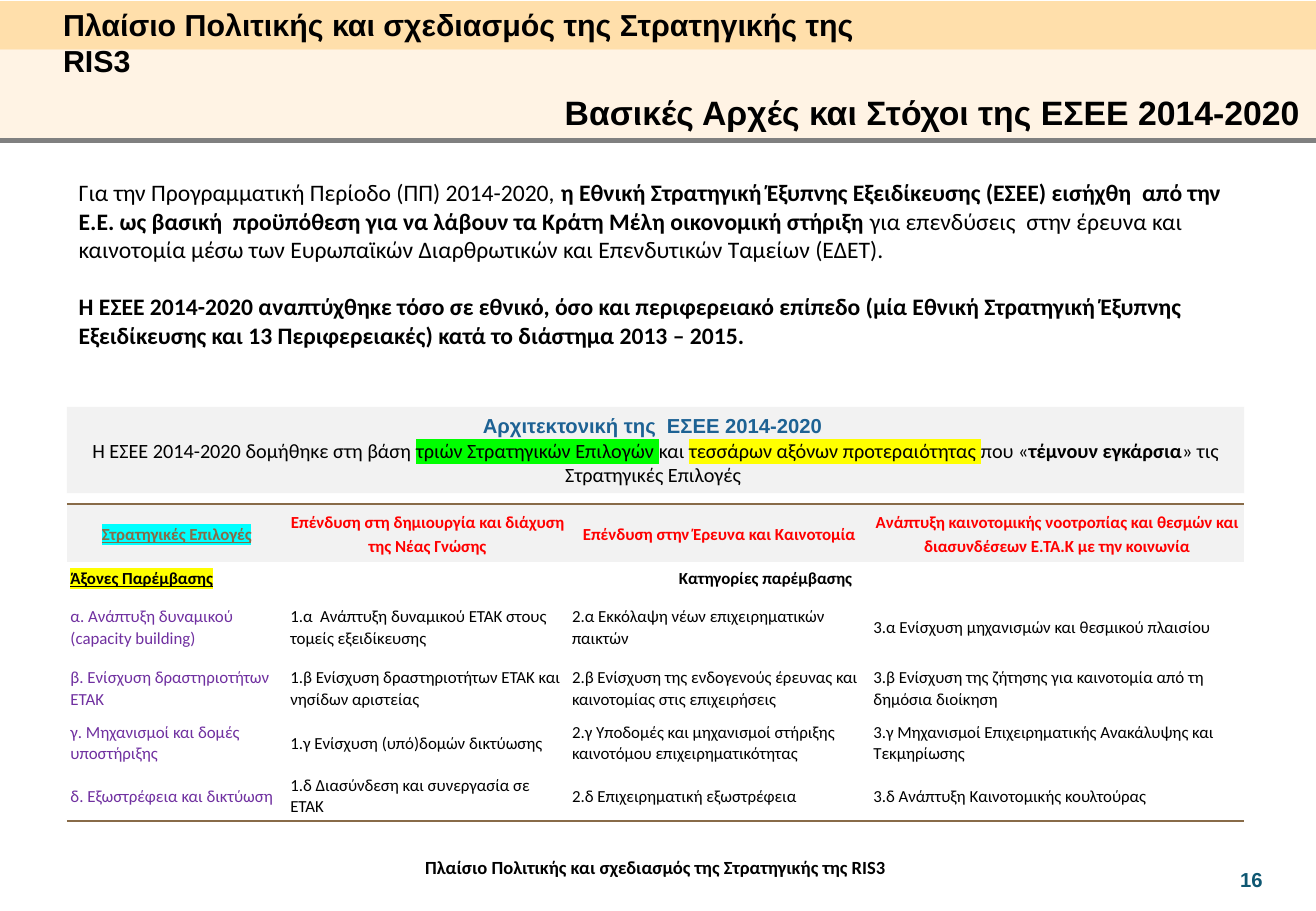
import pptx
import pptx.dml.color
import pptx.enum.shapes
import pptx.enum.text
import pptx.oxml
import pptx.oxml.ns
import pptx.util
from lxml import etree

Pt = pptx.util.Pt
ALIGN = pptx.enum.text.PP_ALIGN
ANCHOR = pptx.enum.text.MSO_ANCHOR
qn = pptx.oxml.ns.qn

COLORS = {
    "black": "000000", "red": "FF0000", "purple": "7030A0", "brown": "886B48",
    "blue": "1D6294", "teal": "0E5772", "gray": "808080", "panel": "F2F2F2",
    "band": "FFDFAB", "pale_band": "FFE9CA",
    "cyan": "00FFFF", "yellow": "FFFF00", "green": "00FF00",
}

BODY = {"name": "Calibri", "size": Pt(14), "bold": False}
BODY_BOLD = {**BODY, "bold": True}
TITLE = {"name": "Arial", "size": Pt(18), "bold": True}
SUBTITLE = {**TITLE, "size": Pt(20)}
NUMBER = {**TITLE, "size": Pt(12), "color": "teal"}
FOOTER = {**BODY_BOLD, "size": Pt(11)}
PANEL_TITLE = {**TITLE, "size": Pt(12), "color": "blue"}
PANEL = {**BODY, "size": Pt(12)}
CELL = {**BODY, "size": Pt(10)}
CELL_BOLD = {**CELL, "bold": True}
AXIS = {**CELL, "color": "purple"}
OPTION = {**CELL_BOLD, "color": "red"}
OPTIONS_LABEL = {**CELL_BOLD, "color": "brown", "underline": True, "highlight": "cyan"}
AXES_LABEL = {**CELL_BOLD, "underline": True, "highlight": "yellow"}

PARAGRAPHS = [
    [("Για την Προγραμματική Περίοδο (ΠΠ) 2014-2020, ", BODY),
     ("η Εθνική Στρατηγική Έξυπνης Εξειδίκευσης (ΕΣΕΕ) εισήχθη  από την Ε.Ε. ως βασική  "
      "προϋπόθεση για να λάβουν τα Κράτη Μέλη οικονομική στήριξη ", BODY_BOLD),
     ("για επενδύσεις  στην έρευνα και καινοτομία μέσω των Ευρωπαϊκών Διαρθρωτικών και "
      "Επενδυτικών Ταμείων (ΕΔΕΤ).", BODY)],
    [("Η ΕΣΕΕ 2014-2020 αναπτύχθηκε τόσο σε εθνικό, όσο και περιφερειακό επίπεδο (μία Εθνική "
      "Στρατηγική Έξυπνης Εξειδίκευσης και 13 Περιφερειακές) κατά το διάστημα 2013 – 2015.",
      BODY_BOLD)],
]

ARCHITECTURE = [
    [("Αρχιτεκτονική της  ΕΣΕΕ 2014-2020 ", PANEL_TITLE)],
    [("Η ΕΣΕΕ 2014-2020 δομήθηκε στη βάση ", PANEL),
     ("τριών Στρατηγικών Επιλογών ", {**PANEL, "highlight": "green"}),
     ("και ", PANEL),
     ("τεσσάρων αξόνων προτεραιότητας ", {**PANEL, "highlight": "yellow"}),
     ("που «", PANEL),
     ("τέμνουν εγκάρσια", {**PANEL, "bold": True}),
     ("» τις Στρατηγικές Επιλογές ", PANEL)],
]

TABLE_ROWS = [
    ["Στρατηγικές Επιλογές", "Επένδυση στη δημιουργία και διάχυση της Νέας Γνώσης",
     "Επένδυση στην Έρευνα και Καινοτομία",
     "Ανάπτυξη καινοτομικής νοοτροπίας και θεσμών και διασυνδέσεων Ε.ΤΑ.Κ με την κοινωνία"],
    ["Άξονες Παρέμβασης", "Κατηγορίες παρέμβασης"],
    ["α. Ανάπτυξη δυναμικού (capacity building)",
     "1.α  Ανάπτυξη δυναμικού ΕΤΑΚ στους τομείς εξειδίκευσης",
     "2.α Εκκόλαψη νέων επιχειρηματικών παικτών",
     "3.α Ενίσχυση μηχανισμών και θεσμικού πλαισίου"],
    ["β. Ενίσχυση δραστηριοτήτων ΕΤΑΚ",
     "1.β Ενίσχυση δραστηριοτήτων ΕΤΑΚ και νησίδων αριστείας",
     "2.β Ενίσχυση της ενδογενούς έρευνας και καινοτομίας στις επιχειρήσεις",
     "3.β Ενίσχυση της ζήτησης για καινοτομία από τη δημόσια διοίκηση"],
    ["γ. Μηχανισμοί και δομές υποστήριξης", "1.γ Ενίσχυση (υπό)δομών δικτύωσης",
     "2.γ Υποδομές και μηχανισμοί στήριξης καινοτόμου επιχειρηματικότητας",
     "3.γ Μηχανισμοί Επιχειρηματικής Ανακάλυψης και Τεκμηρίωσης"],
    ["δ. Εξωστρέφεια και δικτύωση", "1.δ Διασύνδεση και συνεργασία σε ΕΤΑΚ",
     "2.δ Επιχειρηματική εξωστρέφεια", "3.δ Ανάπτυξη Καινοτομικής κουλτούρας"],
]
COLUMN_WIDTHS = [130.3, 167, 178.6, 222]
ROW_HEIGHTS = [34.5, 18.7, 39.6, 32.4, 32.4, 30.4]


def rgb(color):
    return pptx.dml.color.RGBColor.from_string(COLORS[color])


def set_attributes(target, values):
    for name, value in values.items():
        setattr(target, name, value)


def add_run(paragraph, text, style):
    run = paragraph.add_run()
    run.text = text
    values = dict(style)
    run.font.color.rgb = rgb(values.pop("color", "black"))
    highlight = values.pop("highlight", None)
    set_attributes(run.font, values)
    if highlight:
        fill = run.font._element.find(qn("a:solidFill"))
        element = etree.Element(qn("a:highlight"))
        etree.SubElement(element, qn("a:srgbClr"), val=COLORS[highlight])
        fill.addnext(element)


def write(text_frame, paragraphs, alignment=ALIGN.LEFT, space_before=0, line_spacing=1.0):
    for index, runs in enumerate(paragraphs):
        paragraph = text_frame.add_paragraph() if index else text_frame.paragraphs[0]
        set_attributes(paragraph, {"alignment": alignment, "line_spacing": line_spacing,
                                   "space_before": Pt(space_before if index else 0)})
        for text, style in runs:
            add_run(paragraph, text, style)


def place(shape, left, top, width, height):
    set_attributes(shape, {"left": Pt(left), "top": Pt(top),
                           "width": Pt(width), "height": Pt(height)})


def add_text(slide, box, paragraphs, margins=None, **options):
    shape = slide.shapes.add_textbox(*map(Pt, box))
    shape.text_frame.word_wrap = True
    set_attributes(shape.text_frame, margins or {})
    write(shape.text_frame, paragraphs, **options)


def add_rectangle(slide, box, color, opacity=100):
    shape = slide.shapes.add_shape(pptx.enum.shapes.MSO_SHAPE.RECTANGLE, *map(Pt, box))
    shape.shadow.inherit = False
    shape.fill.solid()
    shape.fill.fore_color.rgb = rgb(color)
    shape.line.fill.background()
    if opacity < 100:
        fill = shape._element.spPr.find(qn("a:solidFill"))
        etree.SubElement(fill[0], qn("a:alpha"), val=str(opacity * 1000))
    return shape


def add_line(slide, left, top, right, color, width):
    line = slide.shapes.add_connector(pptx.enum.shapes.MSO_CONNECTOR.STRAIGHT,
                                      Pt(left), Pt(top), Pt(right), Pt(top))
    line.line.color.rgb = rgb(color)
    line.line.width = Pt(width)
    etree.SubElement(line._element.spPr, qn("a:effectLst"))


def add_border(cell, tag, color, width):
    border = etree.Element(qn(tag), w=str(Pt(width)))
    fill = etree.SubElement(border, qn("a:solidFill"))
    etree.SubElement(fill, qn("a:srgbClr"), val=COLORS[color])
    cell._tc.get_or_add_tcPr().insert(0, border)


def cell_style(row, column):
    if row == 0:
        return OPTION if column else OPTIONS_LABEL
    if row == 1:
        return CELL_BOLD if column else AXES_LABEL
    return CELL if column else AXIS


def add_strategy_table(slide, left, top):
    box = (left, top, sum(COLUMN_WIDTHS), sum(ROW_HEIGHTS))
    last_row = len(ROW_HEIGHTS) - 1
    table = slide.shapes.add_table(last_row + 1, len(COLUMN_WIDTHS), *map(Pt, box)).table
    set_attributes(table, {"first_row": False, "horz_banding": False})
    style_id = table._tbl.tblPr.find(qn("a:tableStyleId"))
    style_id.text = "{2D5ABB26-0587-4C30-8999-92F81FD0307C}"
    for column, width in zip(table.columns, COLUMN_WIDTHS):
        column.width = Pt(width)
    for row, height in zip(table.rows, ROW_HEIGHTS):
        row.height = Pt(height)
    table.cell(1, 1).merge(table.cell(1, 3))
    margins = {f"margin_{side}": Pt(2.2) for side in ("left", "right", "top", "bottom")}
    for row, texts in enumerate(TABLE_ROWS):
        for column, text in enumerate(texts):
            cell = table.cell(row, column)
            set_attributes(cell, {**margins, "vertical_anchor": ANCHOR.MIDDLE})
            centered = row == 0 or (row == 1 and column == 1)
            write(cell.text_frame, [[(text, cell_style(row, column))]],
                  alignment=ALIGN.CENTER if centered else ALIGN.LEFT,
                  line_spacing=1.07 if row else 1.15)
            if row == 0:
                cell.fill.solid()
                cell.fill.fore_color.rgb = rgb("panel")
                add_border(cell, "a:lnT", "brown", 1)
            else:
                cell.fill.background()
            if row == last_row:
                add_border(cell, "a:lnB", "brown", 1)


def add_title(slide, box, text):
    title = slide.shapes.title
    place(title, *box)
    set_attributes(title.text_frame, {
        "word_wrap": True, "vertical_anchor": ANCHOR.TOP,
        "auto_size": pptx.enum.text.MSO_AUTO_SIZE.NONE})
    write(title.text_frame, [[(text, TITLE)]])
    title.element.getparent().append(title.element)


def main():
    presentation = pptx.Presentation()
    set_attributes(presentation, {"slide_width": Pt(780), "slide_height": Pt(540)})
    slide = presentation.slides.add_slide(presentation.slide_layouts[5])
    heading = "Πλαίσιο Πολιτικής και σχεδιασμός της Στρατηγικής της RIS3"
    no_margins = {f"margin_{side}": 0 for side in ("left", "right", "top", "bottom")}
    add_text(slide, (203, 507.6, 373.7, 27.4), [[(heading + " ", FOOTER)]], no_margins,
             alignment=ALIGN.CENTER)
    add_text(slide, (728, 510.5, 37.4, 21.6), [[("16", NUMBER)]])
    add_rectangle(slide, (0, 0.7, 780, 28.8), "band")
    add_rectangle(slide, (0, 29.5, 780, 54), "pale_band", 50)
    add_line(slide, 0, 83.5, 780, "gray", 3)
    add_title(slide, (30.2, 0, 525.6, 28.8), heading)
    add_text(slide, (327.6, 51.1, 483, 31.7),
             [[("Βασικές Αρχές και Στόχοι της ΕΣΕΕ 2014-2020", SUBTITLE)]])
    add_text(slide, (39.6, 102.2, 697.9, 143.3), PARAGRAPHS, space_before=17)
    add_strategy_table(slide, 39.6, 298.8)
    panel = add_rectangle(slide, (39.6, 241.2, 697.9, 51.1), "panel")
    panel.text_frame.word_wrap = True
    write(panel.text_frame, ARCHITECTURE, alignment=ALIGN.CENTER)
    presentation.save("out.pptx")


if __name__ == "__main__":
    main()
